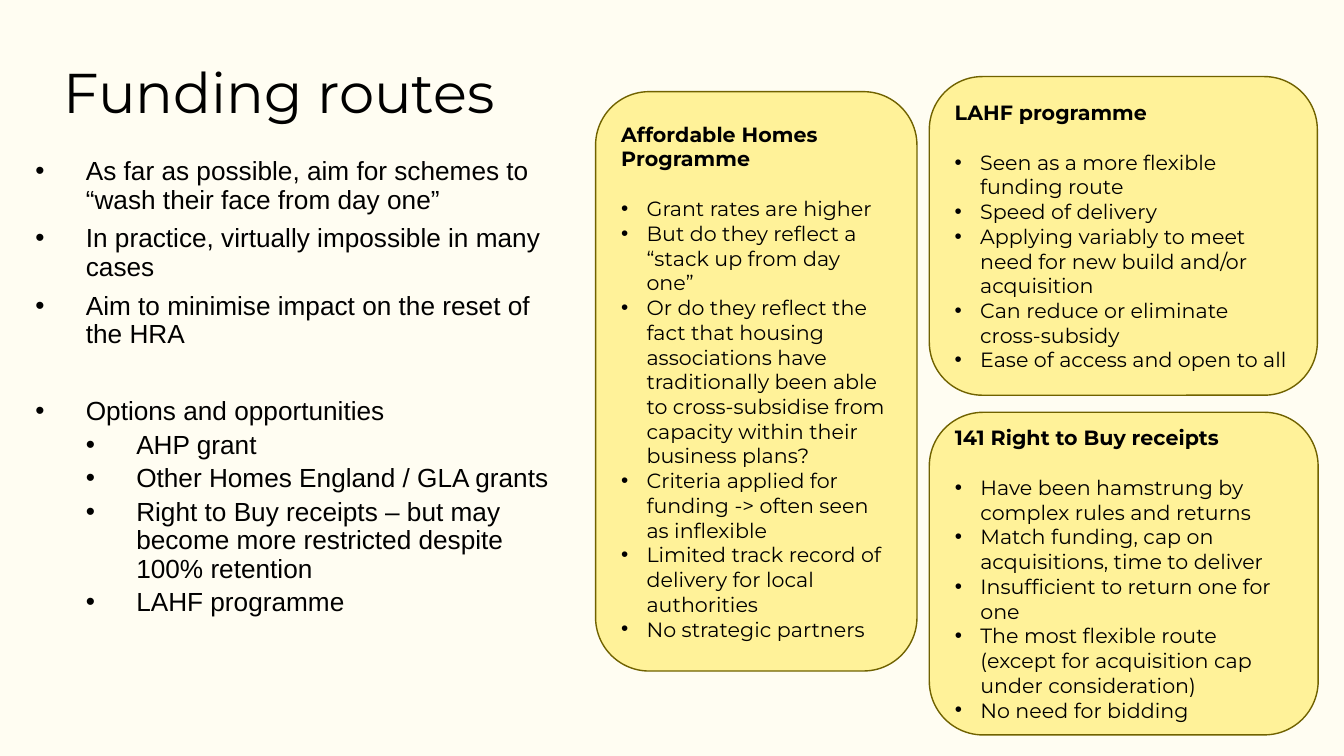
import pptx
import pptx.util
import pptx.dml.color
import pptx.enum.shapes
import pptx.enum.text
import lxml.etree
import pptx.oxml.ns

Cm = pptx.util.Cm
Pt = pptx.util.Pt
RGBColor = pptx.dml.color.RGBColor
Anchor = pptx.enum.text.MSO_ANCHOR
LEFT = pptx.enum.text.PP_ALIGN.LEFT

BLACK = RGBColor(0x00, 0x00, 0x00)
CREAM = RGBColor(0xFF, 0xFD, 0xF2)
YELLOW = RGBColor(0xFF, 0xF2, 0x99)
OLIVE = RGBColor(0x70, 0x62, 0x00)

AIMS = [
    (0, "As far as possible, aim for schemes to “wash their face from day one”"),
    (0, "In practice, virtually impossible in many cases"),
    (0, "Aim to minimise impact on the reset of the HRA"),
    (0, "Options and opportunities"),
    (1, "AHP grant"),
    (1, "Other Homes England / GLA grants"),
    (1, "Right to Buy receipts – but may become more restricted despite 100% retention"),
    (1, "LAHF programme"),
]
CARDS = [
    ((15.01, 2.31, 8.1, 14.6), "Affordable Homes Programme", [
        "Grant rates are higher",
        "But do they reflect a “stack up from day one”",
        "Or do they reflect the fact that housing associations have traditionally "
        "been able to cross-subsidise from capacity within their business plans?",
        "Criteria applied for funding -> often seen as inflexible",
        "Limited track record of delivery for local authorities",
        "No strategic partners",
    ]),
    ((23.42, 1.93, 9.78, 8.03), "LAHF programme", [
        "Seen as a more flexible funding route",
        "Speed of delivery",
        "Applying variably to meet need for new build and/or acquisition",
        "Can reduce or eliminate cross-subsidy",
        "Ease of access and open to all",
    ]),
    ((23.42, 10.39, 9.8, 8.13), "141 Right to Buy receipts", [
        "Have been hamstrung by complex rules and returns",
        "Match funding, cap on acquisitions, time to deliver",
        "Insufficient to return one for one",
        "The most flexible route (except for acquisition cap under consideration)",
        "No need for bidding",
    ]),
]


class Deck:
    head = "Montserrat"
    text = "Arial"

    def __init__(self, prs):
        self.slide = prs.slides.add_slide(prs.slide_layouts[1])
        fill = self.slide.background.fill
        fill.solid()
        fill.fore_color.rgb = CREAM

    def place(self, shape, box):
        shape.left, shape.top, shape.width, shape.height = map(Cm, box)
        frame = shape.text_frame
        frame.word_wrap = True
        frame.auto_size = pptx.enum.text.MSO_AUTO_SIZE.NONE
        frame.vertical_anchor = Anchor.TOP
        return frame

    def style(self, para, name, size, bold=False):
        para.alignment = LEFT
        font = para.font
        font.name, font.size, font.bold = name, Pt(size), bold
        font.color.rgb = BLACK

    def bullet(self, para, step, level=0):
        props = para._p.get_or_add_pPr()
        props.set("marL", str(Cm(step * (level + 1))))
        props.set("indent", str(-Cm(step)))
        for tag, key, value in (("a:buFont", "typeface", "Arial"), ("a:buChar", "char", "•")):
            mark = lxml.etree.SubElement(props, pptx.oxml.ns.qn(tag))
            mark.set(key, value)

    def title(self, text, box):
        frame = self.place(self.slide.shapes.title, box)
        frame.text = text
        para = frame.paragraphs[0]
        para.line_spacing = 0.9
        self.style(para, self.head, 40)

    def body(self, items, box):
        frame = self.place(self.slide.placeholders[1], box)
        frame.text = "\n".join(text for _, text in items)
        for index, (para, (level, text)) in enumerate(zip(frame.paragraphs, items)):
            para.level = level
            self.bullet(para, 1.27, level)
            para.line_spacing = 0.9
            gap = 3.8 if level else 7.5
            if text.startswith("Options"):
                gap = 35
            para.space_before = Pt(gap if index else 0)
            self.style(para, self.text, 18.7)

    def card(self, box, head, items):
        kind = pptx.enum.shapes.MSO_SHAPE.ROUNDED_RECTANGLE
        shape = self.slide.shapes.add_shape(kind, *map(Cm, box))
        shape.shadow.inherit = False
        shape.fill.solid()
        shape.fill.fore_color.rgb = YELLOW
        shape.line.color.rgb = OLIVE
        shape.line.width = Pt(1)
        frame = self.place(shape, box)
        frame.vertical_anchor = Anchor.MIDDLE
        frame.text = "\n".join([head] + items)
        first, *rest = frame.paragraphs
        first.space_after = Pt(18)
        self.style(first, self.head, 14.7, True)
        for para in rest:
            self.bullet(para, 0.64)
            self.style(para, self.head, 14.7)


def main():
    prs = pptx.Presentation()
    prs.slide_width, prs.slide_height = Cm(33.87), Cm(19.05)
    deck = Deck(prs)
    deck.title("Funding routes", (1.35, 1.52, 25.5, 2.0))
    deck.body(AIMS, (0.64, 3.86, 14.07, 13.34))
    for box, head, items in CARDS:
        deck.card(box, head, items)
    prs.save("out.pptx")


if __name__ == "__main__":
    main()
